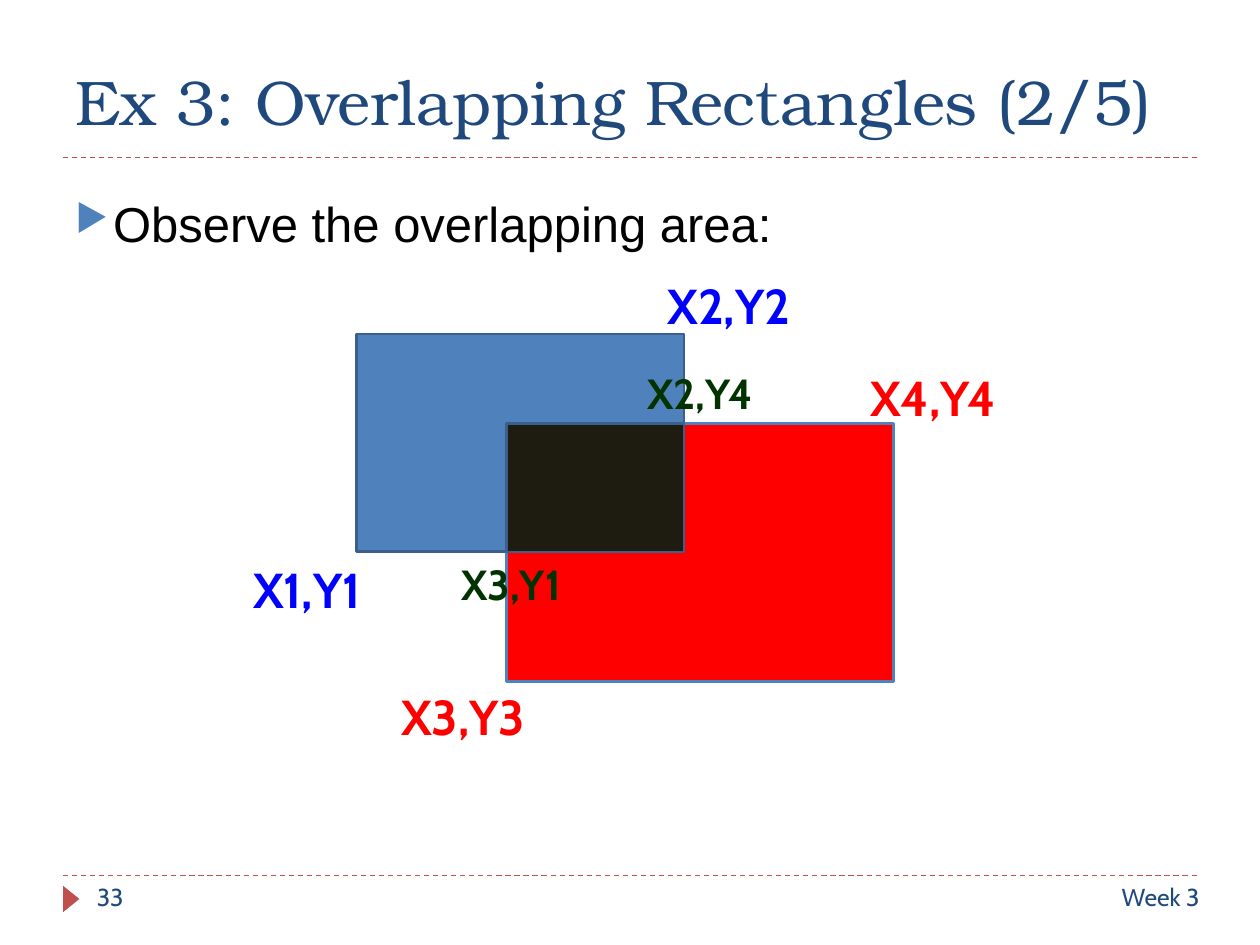
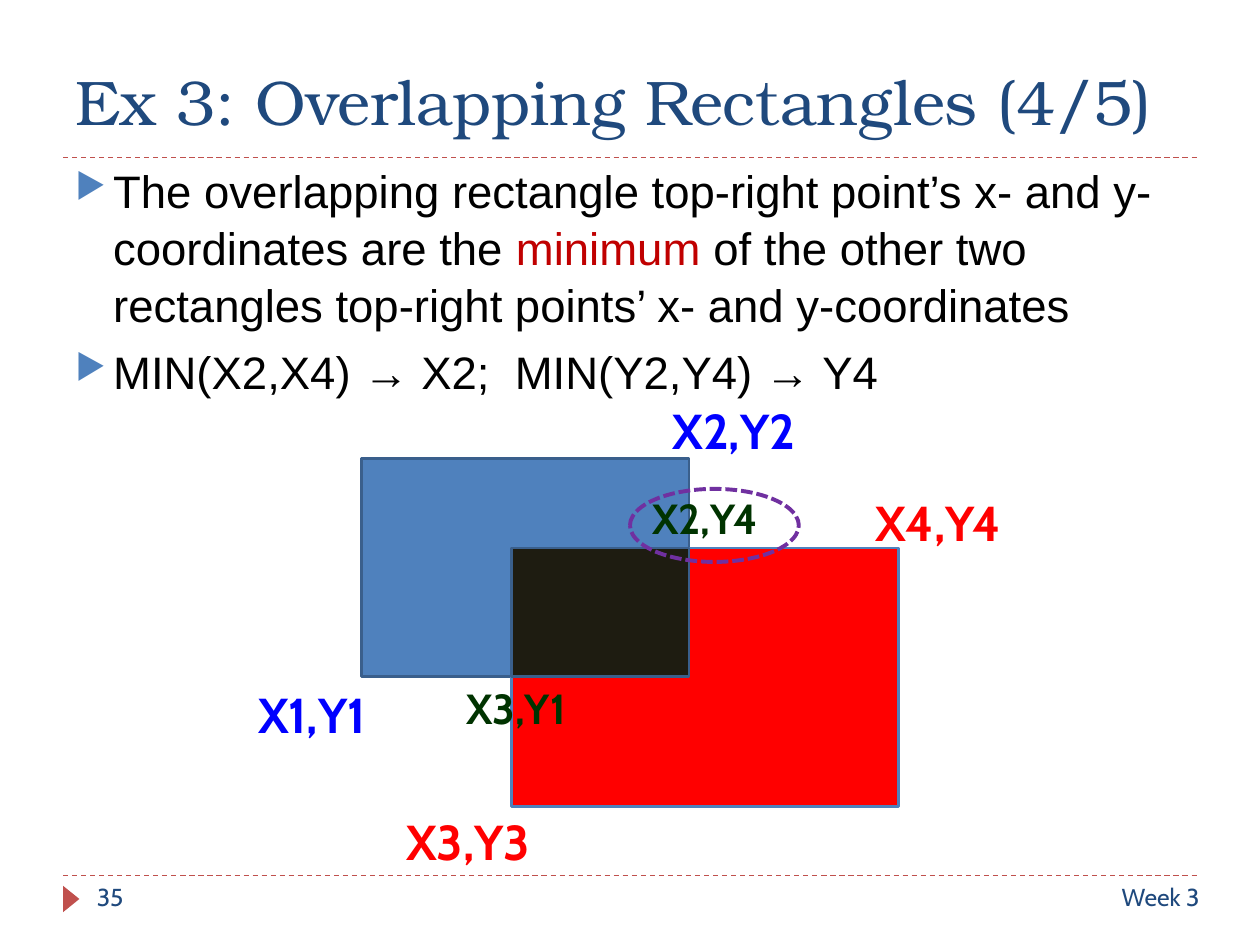
from lxml.etree import SubElement
from pptx import Presentation
from pptx.dml.color import RGBColor
from pptx.enum.dml import MSO_LINE_DASH_STYLE as Dash
from pptx.enum.shapes import MSO_CONNECTOR as Connector, MSO_SHAPE as Shape
from pptx.enum.text import MSO_ANCHOR as Anchor, MSO_AUTO_SIZE as AutoSize, PP_ALIGN as Align
from pptx.oxml.ns import qn
from pptx.util import Inches, Pt

COLORS = {
    "title": "1F497D", "accent": "C0504D", "bullet": "4F81BD", "text": "000000",
    "emphasis": "C00000", "blue_box": "4F81BD", "dark_edge": "3A5F8C",
    "red": "FF0000", "overlap": "1E1C11", "blue": "0000FF", "green": "003300",
    "label_edge": "5E457C", "highlight": "7030A0",
}
TITLE_FONT, BODY_FONT, LABEL_FONT = "TeX Gyre Bonum", "Arial", "Cabin"
LEFT, RIGHT = 0.5, 9.5
TITLE_RULE, FOOTER_RULE = 1.25, 6.95

# name, left, top, width, size, color
BLUE_BOX = (1.26, 0.51, 2.6, 1.73)
RED_BOX = (2.45, 1.22, 3.07, 2.05)
POINT_LABELS = [
    ("X2,Y2", 3.35, 0, 1.73, 28, "blue"),
    ("X1,Y1", 0, 2.25, 1.73, 28, "blue"),
    ("X4,Y4", 5.01, 0.73, 1.65, 28, "red"),
    ("X3,Y3", 1.28, 3.26, 1.65, 28, "red"),
    ("X2,Y4", 3.12, 0.73, 1.73, 24, "green"),
    ("X3,Y1", 1.62, 2.24, 1.73, 24, "green"),
]


def color(name):
    """Return the named palette colour."""
    return RGBColor.from_string(COLORS[name])


def inches(*lengths):
    """Convert several numbers to lengths."""
    return [Inches(length) for length in lengths]


def set_font(font, name, size, color_name, bold=None):
    """Format a paragraph or run font."""
    font.name, font.size, font.bold = name, Pt(size), bold
    font.color.rgb = color(color_name)


def add_shape(shapes, kind, box, fill=None, line=None, width=1.5):
    """Add a flat preset shape with optional fill and outline."""
    shape = shapes.add_shape(kind, *inches(*box))
    shape.shadow.inherit = False
    if fill:
        shape.fill.solid()
        shape.fill.fore_color.rgb = color(fill)
    else:
        shape.fill.background()
    if line:
        shape.line.color.rgb = color(line)
        shape.line.width = Pt(width)
    else:
        shape.line.fill.background()
    return shape


def add_text(shapes, box, text, size, color_name, align=Align.LEFT, bold=None):
    """Add a one-paragraph text box and return it."""
    text_box = shapes.add_textbox(*inches(*box))
    text_box.text_frame.word_wrap = True
    paragraph = text_box.text_frame.paragraphs[0]
    paragraph.text, paragraph.alignment = text, align
    set_font(paragraph.font, LABEL_FONT, size, color_name, bold)
    return text_box


def add_rule(slide, top):
    """Draw a dashed rule across the slide."""
    rule = slide.shapes.add_connector(Connector.STRAIGHT, *inches(LEFT, top, RIGHT, top))
    rule.line.color.rgb = color("accent")
    rule.line.width = Pt(0.75)
    rule.line.dash_style = Dash.DASH
    SubElement(rule._element.spPr, qn("a:effectLst"))


def add_frame(slide, title, number):
    """Place the title, both rules and the footer."""
    for top in (FOOTER_RULE, TITLE_RULE):
        add_rule(slide, top)
    marker = add_shape(slide.shapes, Shape.ISOSCELES_TRIANGLE, (0.46, 7.07, 0.21, 0.13), "accent")
    marker.rotation = 90
    heading = slide.shapes.title
    heading.left, heading.top, heading.width, heading.height = inches(LEFT, 0.17, 9, 0.98)
    frame = heading.text_frame
    frame.text = title
    frame.vertical_anchor, frame.auto_size = Anchor.BOTTOM, AutoSize.NONE
    frame.paragraphs[0].alignment = Align.LEFT
    set_font(frame.paragraphs[0].font, TITLE_FONT, 36, "title")
    add_text(slide.shapes, (0.67, FOOTER_RULE, 2.17, 0.4), str(number), 14, "title")
    add_text(slide.shapes, (8.23, FOOTER_RULE, 1.39, 0.4), "Week 3", 14, "title", Align.RIGHT)


def set_bullet(paragraph):
    """Give a paragraph a hanging triangle bullet."""
    properties = paragraph._p.get_or_add_pPr()
    properties.set("marL", str(Inches(0.3)))
    properties.set("indent", str(-Inches(0.3)))
    bullet_color = SubElement(properties, qn("a:buClr"))
    SubElement(bullet_color, qn("a:srgbClr"), val=COLORS["bullet"])
    SubElement(properties, qn("a:buSzPct"), val="76000")
    SubElement(properties, qn("a:buChar"), char="▶")


def add_body(slide, box, size, bullets):
    """Write bullets, each a list of (text, colour name) runs."""
    frame = slide.shapes.add_textbox(*inches(*box)).text_frame
    frame.word_wrap = True
    for index, runs in enumerate(bullets):
        paragraph = frame.add_paragraph() if index else frame.paragraphs[0]
        paragraph.space_before, paragraph.line_spacing = Pt(6), 1.04
        set_bullet(paragraph)
        set_font(paragraph.font, BODY_FONT, size, "text")
        for text, color_name in runs:
            run = paragraph.add_run()
            run.text = text
            if color_name != "text":
                run.font.color.rgb = color(color_name)


def add_point_label(shapes, box, text, size, color_name):
    """Add a bold, finely outlined coordinate label."""
    label = add_text(shapes, box, text, size, color_name, Align.CENTER, True)
    label.text_frame.auto_size = AutoSize.SHAPE_TO_FIT_TEXT
    run = label.text_frame.paragraphs[0].runs[0]
    set_font(run.font, LABEL_FONT, size, color_name, True)
    outline = SubElement(run._r.get_or_add_rPr(), qn("a:ln"), w=str(Pt(0.71)))
    fill = SubElement(outline, qn("a:solidFill"))
    SubElement(fill, qn("a:srgbClr"), val=COLORS["label_edge"])
    run._r.rPr.insert(0, outline)


def add_rectangles(slide, left, top):
    """Draw the two rectangles, their overlap and the corner labels."""
    shapes = slide.shapes.add_group_shape().shapes
    blue_left, blue_top, blue_width, blue_height = BLUE_BOX
    red_left, red_top = RED_BOX[:2]
    overlap = (red_left, red_top, blue_left + blue_width - red_left,
               blue_top + blue_height - red_top)
    for (x, y, width, height), fill, line in (
            (BLUE_BOX, "blue_box", "dark_edge"),
            (RED_BOX, "red", "blue_box"),
            (overlap, "overlap", "dark_edge")):
        add_shape(shapes, Shape.RECTANGLE, (left + x, top + y, width, height), fill, line)
    for text, x, y, width, size, color_name in POINT_LABELS:
        height = 0.57 if size == 28 else 0.5
        add_point_label(shapes, (left + x, top + y, width, height), text, size, color_name)


def add_highlight(slide, left, top):
    """Circle the top-right corner of the overlap."""
    ellipse = add_shape(slide.shapes, Shape.OVAL, (left + 3.39, top + 0.75, 1.34, 0.58),
                        line="highlight", width=2.25)
    ellipse.line.dash_style = Dash.SQUARE_DOT


def add_exercise_slide(presentation, part, number, body_box, size, bullets, diagram, highlight=False):
    """Build one slide of the exercise."""
    slide = presentation.slides.add_slide(presentation.slide_layouts[5])
    add_frame(slide, f"Ex 3: Overlapping Rectangles ({part}/5)", number)
    add_body(slide, body_box, size, bullets)
    add_rectangles(slide, *diagram)
    if highlight:
        add_highlight(slide, *diagram)


def main():
    """Build and save the presentation."""
    presentation = Presentation()
    presentation.slide_width, presentation.slide_height = inches(10, 7.5)
    add_exercise_slide(presentation, 2, 33, (LEFT, 1.47, 9, 5.27), 28,
                       [[("Observe the overlapping area:", "text")]], (1.57, 2.14))
    add_exercise_slide(
        presentation, 4, 35, (LEFT, 1.23, 9, 5.5), 26,
        [[("The overlapping rectangle top-right point’s x- and y- coordinates are the ", "text"),
          ("minimum ", "emphasis"),
          ("of the other two rectangles top-right points’ x- and y-coordinates", "text")],
         [("MIN(X2,X4) → X2;  MIN(Y2,Y4) → Y4", "text")]],
        (1.61, 3.13), highlight=True)
    presentation.save("out.pptx")


if __name__ == "__main__":
    main()
